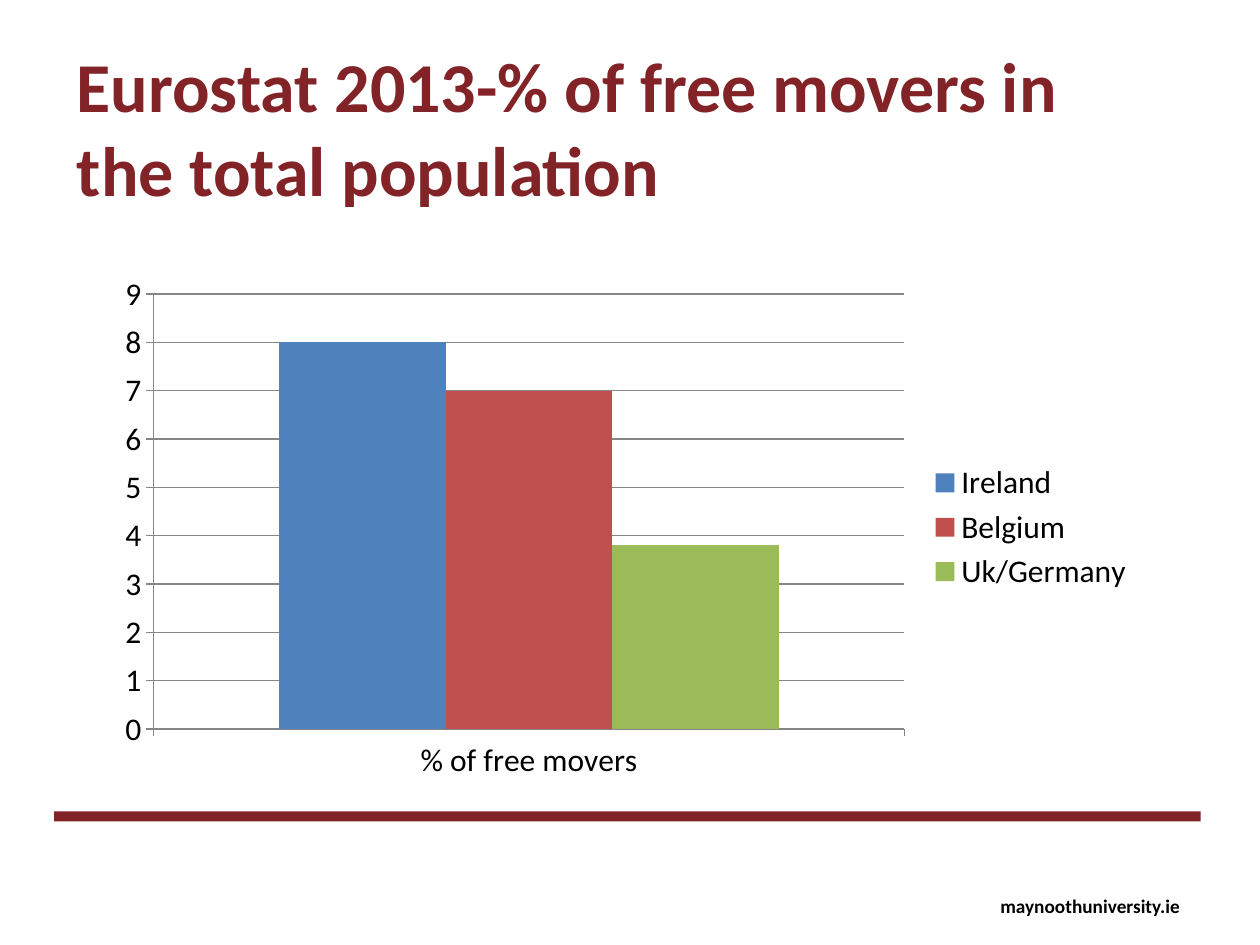
from lxml import etree
from pptx import Presentation
from pptx.chart.data import CategoryChartData
from pptx.dml.color import RGBColor
from pptx.enum.chart import XL_CHART_TYPE, XL_LEGEND_POSITION, XL_TICK_MARK
from pptx.enum.shapes import MSO_SHAPE
from pptx.enum.text import MSO_ANCHOR, PP_ALIGN
from pptx.oxml.ns import qn
from pptx.util import Inches, Pt

COLUMNS = XL_CHART_TYPE.COLUMN_CLUSTERED
LEGEND_RIGHT = XL_LEGEND_POSITION.RIGHT
TICK_OUT, TICK_NONE = XL_TICK_MARK.OUTSIDE, XL_TICK_MARK.NONE
TOP, LEFT = MSO_ANCHOR.TOP, PP_ALIGN.LEFT
RECT = MSO_SHAPE.RECTANGLE

FONT = "Calibri"
TITLE_ONLY = 5
COLORS = {
    "maroon": "822327",
    "black": "000000",
    "grid": "868686",
    "Ireland": "4F81BD",
    "Belgium": "C0504D",
    "Uk/Germany": "9BBB59",
}
MOVERS = {"Ireland": 8, "Belgium": 7, "Uk/Germany": 3.8}


def rgb(name):
    return RGBColor.from_string(COLORS[name])


def style_font(font, size, color, bold=False):
    font.name = FONT
    font.size = Pt(size)
    font.bold = bold
    font.color.rgb = rgb(color)


def add_run(p, text, size, color):
    r = p.add_run()
    r.text = text
    style_font(r.font, size, color, bold=True)


def place_title(slide, x, y, w, h):
    sp = slide.shapes.title
    sp.left, sp.top, sp.width, sp.height = map(Inches, (x, y, w, h))
    tf = sp.text_frame
    tf.word_wrap = True
    tf.vertical_anchor = TOP
    p = tf.paragraphs[0]
    p.alignment = LEFT
    add_run(p, "Eurostat 2013-% of free movers in the total population", 40, "maroon")


def style_axis(axis):
    axis.major_tick_mark = TICK_OUT
    axis.minor_tick_mark = TICK_NONE
    axis.format.line.color.rgb = rgb("grid")
    axis.format.line.width = Pt(0.75)


def add_movers_chart(slide, x, y, w, h):
    data = CategoryChartData()
    data.categories = ["% of free movers"]
    for country, value in MOVERS.items():
        data.add_series(country, [value])
    chart = slide.shapes.add_chart(COLUMNS, *map(Inches, (x, y, w, h)), data).chart
    style_font(chart.font, 18, "black")
    chart.has_title = False
    chart.has_legend = True
    chart.legend.position = LEGEND_RIGHT
    chart.legend.include_in_layout = False

    style_axis(chart.category_axis)
    axis = chart.value_axis
    style_axis(axis)
    axis.minimum_scale, axis.maximum_scale, axis.major_unit = 0, 9, 1
    axis.has_major_gridlines = True
    axis.major_gridlines.format.line.color.rgb = rgb("grid")
    axis.major_gridlines.format.line.width = Pt(0.75)

    plot = chart.plots[0]
    plot.gap_width = 150
    plot.overlap = 0
    plot.vary_by_categories = False
    for series in plot.series:
        series.format.fill.solid()
        series.format.fill.fore_color.rgb = rgb(series.name)


def add_rule(slide, x, y, w, h):
    sp = slide.shapes.add_shape(RECT, *map(Inches, (x, y, w, h)))
    sp.shadow.inherit = False
    sp.fill.solid()
    sp.fill.fore_color.rgb = rgb("maroon")
    sp.line.fill.background()


def add_web_address(slide, x, y, w, h):
    sp = slide.shapes.add_textbox(*map(Inches, (x, y, w, h)))
    tf = sp.text_frame
    tf.word_wrap = False
    etree.SubElement(tf._txBody.bodyPr, qn("a:spAutoFit"))
    add_run(tf.paragraphs[0], "maynoothuniversity.ie", 11, "black")


def main():
    prs = Presentation()
    prs.slide_width, prs.slide_height = Inches(10), Inches(7.5)
    slide = prs.slides.add_slide(prs.slide_layouts[TITLE_ONLY])
    add_web_address(slide, 7.84, 7.05, 1.65, 0.29)
    add_rule(slide, 0.43, 6.44, 9.1, 0.08)
    place_title(slide, 0.51, 0.29, 8.57, 1.5)
    add_movers_chart(slide, 0.83, 2.1, 8.27, 4.17)
    prs.save("out.pptx")


if __name__ == "__main__":
    main()
